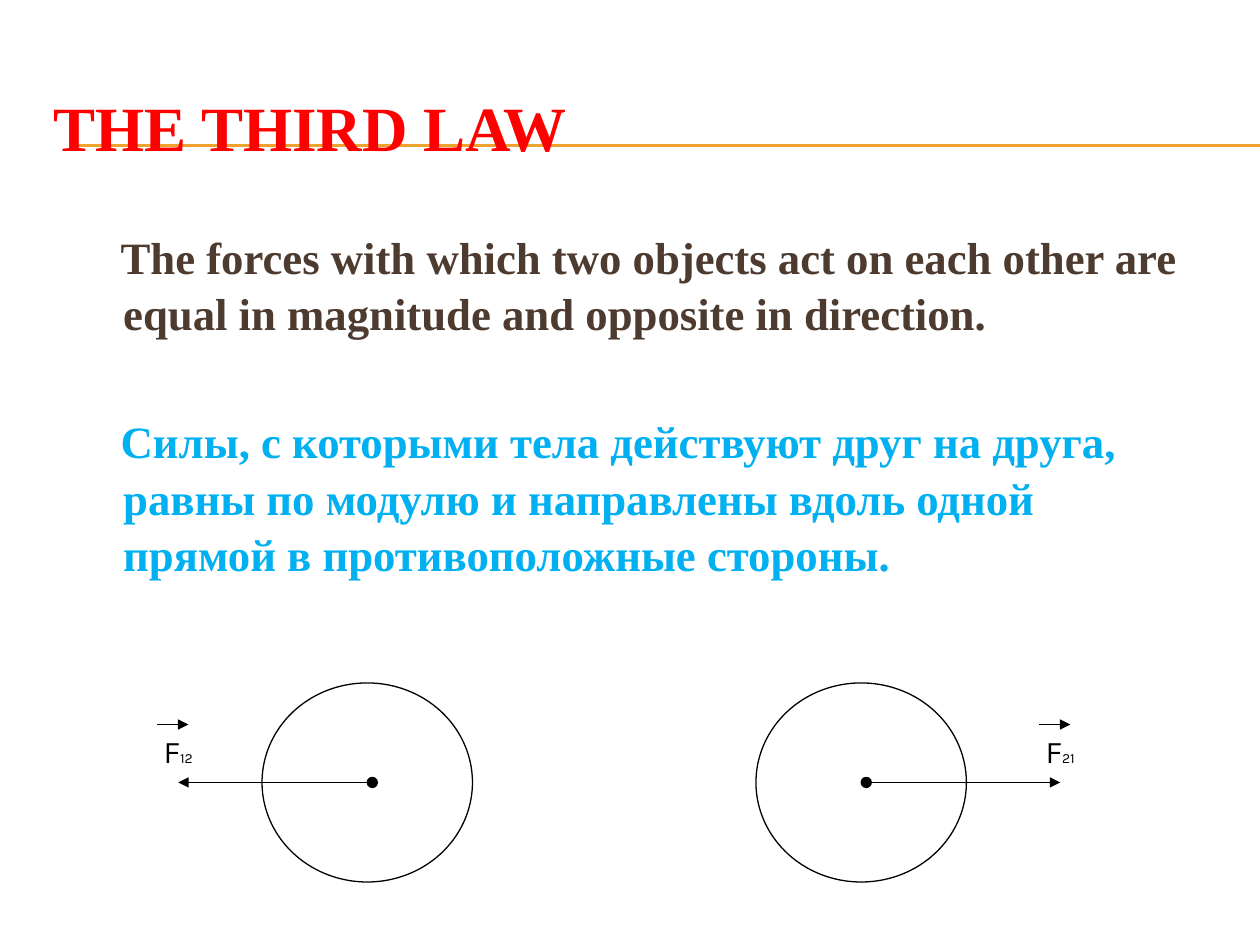
from lxml import etree
from pptx import Presentation
from pptx import util as u
from pptx.dml.color import RGBColor
from pptx.enum import shapes, text
from pptx.oxml.ns import qn

COLORS = {"title": "FF0000", "rule": "F0A22E", "english": "4E3B30",
          "russian": "00B0F0", "ink": "000000"}
SERIF, SANS = "Times New Roman", "Karla"


def rgb(name):
    return RGBColor.from_string(COLORS[name])


def add_line(s, x1, y1, x2, y2, color, arrow=False):
    line = s.shapes.add_connector(shapes.MSO_CONNECTOR.STRAIGHT, *map(u.Inches, (x1, y1, x2, y2)))
    line.line.color.rgb = rgb(color)
    line.line.width = u.Pt(0.75)
    sp_pr = line._element.spPr
    if arrow:
        etree.SubElement(sp_pr.find(qn("a:ln")), qn("a:tailEnd"), type="triangle")
    etree.SubElement(sp_pr, qn("a:effectLst"))


def add_ellipse(s, x, y, w, h, fill=None):
    sp = s.shapes.add_shape(shapes.MSO_SHAPE.OVAL, *map(u.Inches, (x, y, w, h)))
    sp.shadow.inherit = False
    if fill:
        sp.fill.solid()
        sp.fill.fore_color.rgb = rgb(fill)
    else:
        sp.fill.background()
    sp.line.color.rgb = rgb("ink")
    sp.line.width = u.Pt(0.75)


def add_text_frame(s, x, y, w, h, anchor, wrap=True):
    tf = s.shapes.add_textbox(*map(u.Inches, (x, y, w, h))).text_frame
    tf.word_wrap = wrap
    tf.vertical_anchor = anchor
    return tf


def add_run(p, words, size, font, color, bold=False):
    r = p.add_run()
    r.text = words
    r.font.size = u.Pt(size)
    r.font.name = font
    r.font.bold = bold
    r.font.color.rgb = rgb(color)


def add_title(s, x, y, w, h):
    # Double rule behind the title
    for offset in (0.65, 0.66):
        add_line(s, 0.56, y + offset, 10, y + offset, "rule")
    tf = add_text_frame(s, x, y + 0.04, w, h, text.MSO_ANCHOR.MIDDLE)
    add_run(tf.paragraphs[0], "THE THIRD LAW", 36, SERIF, "title", True)


def add_statements(s, x, y, w, h):
    statements = [
        ("The forces with which two objects act on each other are equal in "
         "magnitude and opposite in direction.", "english", 0),
        ("Силы, с которыми тела действуют друг на друга, равны по модулю и "
         "направлены вдоль одной прямой в противоположные стороны.", "russian", 41),
    ]
    tf = add_text_frame(s, x, y, w, h, text.MSO_ANCHOR.TOP)
    for i, (words, color, gap) in enumerate(statements):
        p = tf.paragraphs[0] if i == 0 else tf.add_paragraph()
        p.line_spacing = 1.05
        p.space_before = u.Pt(gap)
        p_pr = p._p.get_or_add_pPr()
        p_pr.set("marL", str(u.Inches(0.38)))
        p_pr.set("indent", str(u.Inches(-0.02)))
        add_run(p, words, 25.6, SERIF, color, True)


def add_force_body(s, x, y, w, h, direction, index):
    """Circle in the given box with a force arrow; direction is -1 (left) or 1."""
    dot = 0.08
    dot_x, axis_y = x + w / 2, y + h / 2
    start = dot_x + (dot if direction > 0 else 0)
    tip = start + direction * 1.5
    vector_y = y + 0.33

    add_ellipse(s, x, y, w, h)
    add_ellipse(s, dot_x, axis_y - dot / 2, dot, dot, "ink")
    add_line(s, start, axis_y, tip, axis_y, "ink", arrow=True)

    # Label with a vector sign above it
    tf = add_text_frame(s, tip - 0.3, vector_y, 0.6, 0.42, text.MSO_ANCHOR.MIDDLE, wrap=False)
    p = tf.paragraphs[0]
    p.alignment = text.PP_ALIGN.CENTER
    add_run(p, "F", 18, SANS, "ink")
    add_run(p, index, 8, SANS, "ink")
    add_line(s, tip - 0.17, vector_y, tip + 0.08, vector_y, "ink", arrow=True)


def main():
    prs = Presentation()
    prs.slide_width, prs.slide_height = u.Inches(10), u.Inches(7.5)
    s = prs.slides.add_slide(prs.slide_layouts[6])
    add_title(s, 0.33, 0.5, 9.5, 0.92)
    add_statements(s, 0.5, 1.75, 9, 2.5)
    for x, direction, index in ((2.08, -1, "12"), (6, 1, "21")):
        add_force_body(s, x, 5.42, 1.67, 1.58, direction, index)
    prs.save("out.pptx")


if __name__ == "__main__":
    main()
